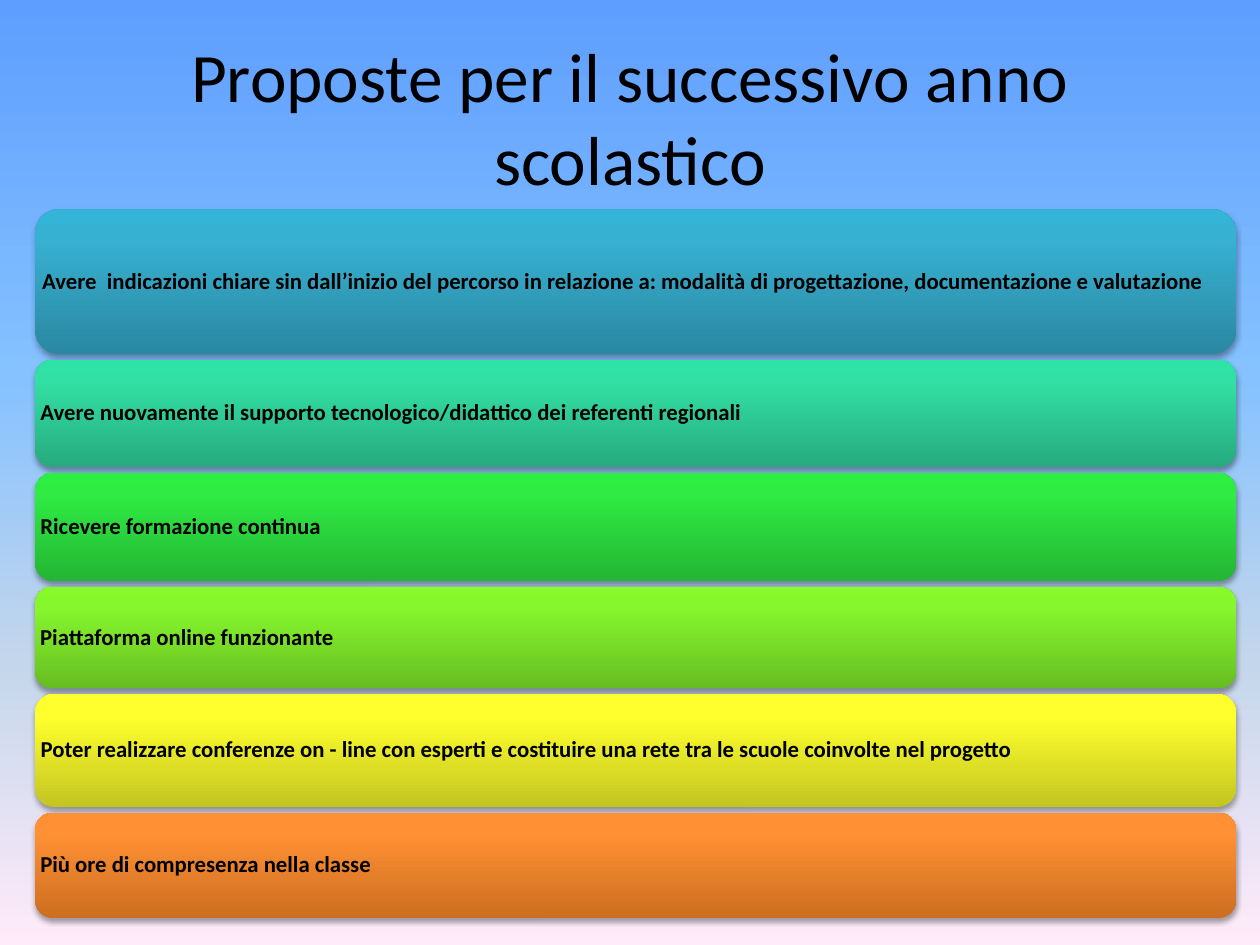
import copy

import lxml.etree
import pptx
import pptx.dml.color
import pptx.enum.shapes
import pptx.enum.text
import pptx.oxml.ns
import pptx.util

Cm = pptx.util.Cm
Pt = pptx.util.Pt
RGBColor = pptx.dml.color.RGBColor
qn = pptx.oxml.ns.qn

BLACK = RGBColor(0x00, 0x00, 0x00)
SKY = [(0, RGBColor(0x5E, 0x9E, 0xFF)), (0.4, RGBColor(0x85, 0xC2, 0xFF)),
       (0.7, RGBColor(0xC4, 0xD6, 0xEB)), (1, RGBColor(0xFF, 0xEB, 0xFA))]
# Bar colours run from the bottom edge to the top edge
TEAL = [RGBColor(0x2A, 0x88, 0xA2), RGBColor(0x37, 0xB1, 0xD2), RGBColor(0x34, 0xB4, 0xD6)]
MINT = [RGBColor(0x27, 0xAB, 0x7E), RGBColor(0x32, 0xDF, 0xA4), RGBColor(0x2F, 0xE3, 0xA6)]
GREEN = [RGBColor(0x24, 0xB5, 0x34), RGBColor(0x2F, 0xEB, 0x43), RGBColor(0x2C, 0xEF, 0x41)]
LIME = [RGBColor(0x67, 0xBD, 0x22), RGBColor(0x86, 0xF6, 0x2D), RGBColor(0x86, 0xFB, 0x29)]
YELLOW = [RGBColor(0xC4, 0xC5, 0x21), RGBColor(0xFE, 0xFF, 0x2C), RGBColor(0xFE, 0xFF, 0x2D)]
ORANGE = [RGBColor(0xCC, 0x6E, 0x20), RGBColor(0xFF, 0x90, 0x34), RGBColor(0xFF, 0x91, 0x36)]

PROPOSALS = [
    ("Avere  indicazioni chiare sin dall’inizio del percorso in relazione a: "
     "modalità di progettazione, documentazione e valutazione", 2.92, TEAL),
    ("Avere nuovamente il supporto tecnologico/didattico dei referenti regionali", 2.17, MINT),
    ("Ricevere formazione continua", 2.19, GREEN),
    ("Piattaforma online funzionante", 2.05, LIME),
    ("Poter realizzare conferenze on - line con esperti e costituire una rete "
     "tra le scuole coinvolte nel progetto", 2.28, YELLOW),
    ("Più ore di compresenza nella classe", 2.13, ORANGE),
]
GAP = 0.11


def set_gradient(fill, element, stops, angle):
    """Fill with any number of (position, colour) stops."""
    fill.gradient()
    fill.gradient_angle = angle
    stop_list = element.find(".//" + qn("a:gsLst"))
    while len(stop_list) < len(stops):
        stop_list.append(copy.deepcopy(stop_list[-1]))
    for stop, (position, color) in zip(fill.gradient_stops, stops):
        stop.position = position
        stop.color.rgb = color


def add_soft_shadow(shape):
    """Cast a faint black shadow straight down."""
    shape.shadow.inherit = False
    effects = shape._element.spPr.find(qn("a:effectLst"))
    shadow = lxml.etree.SubElement(effects, qn("a:outerShdw"), blurRad=str(Pt(3.1)),
                                   dist=str(Pt(1.8)), dir="5400000", rotWithShape="0")
    color = lxml.etree.SubElement(shadow, qn("a:srgbClr"), val=str(BLACK))
    lxml.etree.SubElement(color, qn("a:alpha"), val="35000")


deck = pptx.Presentation()
deck.slide_width = Cm(25.4)
deck.slide_height = Cm(19.05)
page = deck.slides.add_slide(deck.slide_layouts[5])

# Background
set_gradient(page.background.fill, page._element, SKY, 270)

# Title
title = page.shapes.title
title.left, title.top, title.width, title.height = Cm(1.27), Cm(0.76), Cm(22.86), Cm(3.18)
title.text_frame.text = "Proposte per il successivo anno scolastico"
title.text_frame.auto_size = pptx.enum.text.MSO_AUTO_SIZE.NONE
title.text_frame.vertical_anchor = pptx.enum.text.MSO_ANCHOR.MIDDLE
para = title.text_frame.paragraphs[0]
para.alignment = pptx.enum.text.PP_ALIGN.CENTER
span = para.runs[0]
span.font.name = "Calibri"
span.font.size = Pt(39.6)
span.font.color.rgb = BLACK

# Stack of proposal bars
top = 4.22
for wording, height, colors in PROPOSALS:
    bar = page.shapes.add_shape(pptx.enum.shapes.MSO_SHAPE.ROUNDED_RECTANGLE,
                                Cm(0.71), Cm(top), Cm(24.21), Cm(height))
    set_gradient(bar.fill, bar._element, list(zip((0, 0.8, 1), colors)), 90)
    bar.line.fill.background()
    add_soft_shadow(bar)

    frame = bar.text_frame
    frame.text = wording
    frame.word_wrap = True
    frame.vertical_anchor = pptx.enum.text.MSO_ANCHOR.MIDDLE
    # The rounded corners already inset the text
    frame.margin_left = frame.margin_right = frame.margin_top = frame.margin_bottom = 0
    para = frame.paragraphs[0]
    para.alignment = pptx.enum.text.PP_ALIGN.LEFT
    para.line_spacing = 0.9
    span = para.runs[0]
    span.font.name = "Calibri"
    span.font.size = Pt(13)
    span.font.bold = True
    span.font.color.rgb = BLACK
    top += height + GAP

deck.save("out.pptx")
